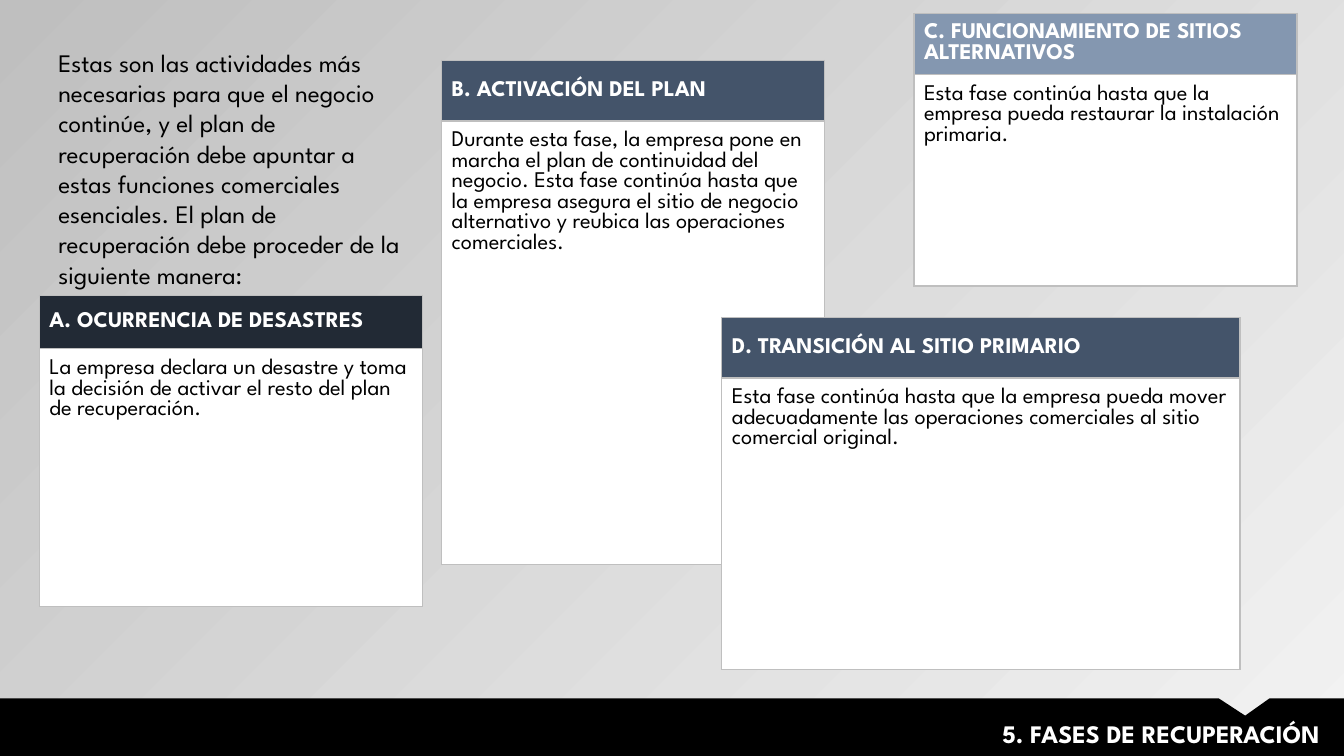
from lxml.etree import SubElement
from pptx import Presentation
from pptx.dml.color import RGBColor
from pptx.enum.text import MSO_ANCHOR as Anchor, MSO_AUTO_SIZE as AutoSize, PP_ALIGN as Align
from pptx.oxml.ns import qn
from pptx.util import Inches, Pt

WIDTH, HEIGHT = Inches(13.33), Inches(7.5)
FONT = "League Spartan"
WHITE, BLACK, BORDER, SLATE = "FFFFFF", "000000", "BFBFBF", "44546A"

PHASES = [
    (68.0, 1.73, 28.51, (8, 28), "8497B0", "C. FUNCIONAMIENTO DE SITIOS ALTERNATIVOS",
     "Esta fase continúa hasta que la empresa pueda restaurar la instalación primaria."),
    (32.86, 8, 28.51, (8, 58.67), SLATE, "B. ACTIVACIÓN DEL PLAN",
     "Durante esta fase, la empresa pone en marcha el plan de continuidad del negocio. "
     "Esta fase continúa hasta que la empresa asegura el sitio de negocio alternativo "
     "y reubica las operaciones comerciales."),
    (53.71, 42, 38.56, (8, 38.53), SLATE, "D. TRANSICIÓN AL SITIO PRIMARIO",
     "Esta fase continúa hasta que la empresa pueda mover adecuadamente las operaciones "
     "comerciales al sitio comercial original."),
    (2.93, 39.07, 28.51, (7.07, 34.13), "222A35", "A. OCURRENCIA DE DESASTRES",
     "La empresa declara un desastre y toma la decisión de activar el resto del plan "
     "de recuperación."),
]
BAND = [(0, 92.4), (90.7, 92.4), (92.65, 94.67), (94.45, 92.4), (100, 92.4), (100, 100), (0, 100)]
INTRO = (
    "Estas son las actividades más necesarias para que el negocio continúe, y el plan de "
    "recuperación debe apuntar a estas funciones comerciales esenciales. El plan de "
    "recuperación debe proceder de la siguiente manera:"
)


def across(percent):
    return round(WIDTH * percent / 100)


def down(percent):
    return round(HEIGHT * percent / 100)


def colour(hex_code):
    return RGBColor.from_string(hex_code)


def write(frame, words, size, hex_code, bold=False, align=Align.LEFT):
    frame.text = words
    frame.word_wrap = True
    paragraph = frame.paragraphs[0]
    paragraph.alignment = align
    font = paragraph.runs[0].font
    font.name, font.size, font.bold = FONT, Pt(size), bold
    font.color.rgb = colour(hex_code)


def outline_cell(cell):
    properties = cell._tc.get_or_add_tcPr()
    for position, side in enumerate(("a:lnL", "a:lnR", "a:lnT", "a:lnB")):
        edge = SubElement(properties, qn(side), w=str(Pt(1)))
        ink = SubElement(edge, qn("a:solidFill"))
        SubElement(ink, qn("a:srgbClr"), val=BORDER)
        properties.insert(position, edge)


def add_phase(slide, left, top, width, rows, header_fill, heading, description):
    phase = slide.shapes.add_table(
        2, 1, across(left), down(top), across(width), down(sum(rows))).table
    phase.horz_banding = False
    contents = [(heading, header_fill, WHITE, True, Anchor.MIDDLE),
                (description, WHITE, BLACK, False, Anchor.TOP)]
    for index, (words, fill, ink, bold, anchor) in enumerate(contents):
        phase.rows[index].height = down(rows[index])
        cell = phase.cell(index, 0)
        cell.margin_left = cell.margin_right = Inches(0.1)
        cell.margin_top = cell.margin_bottom = Inches(0.1)
        cell.vertical_anchor = anchor
        cell.fill.solid()
        cell.fill.fore_color.rgb = colour(fill)
        write(cell.text_frame, words, 16, ink, bold)
        outline_cell(cell)


def add_band(slide):
    points = [(across(x), down(y)) for x, y in BAND]
    builder = slide.shapes.build_freeform(*points[0], scale=1.0)
    builder.add_line_segments(points[1:], close=True)
    band = builder.convert_to_shape()
    band.shadow.inherit = False
    band.fill.solid()
    band.fill.fore_color.rgb = colour(BLACK)
    band.line.fill.background()


def place_title(slide):
    title = slide.shapes.title
    title.left, title.top = across(1.8), down(94.4)
    title.width, title.height = across(97.15), down(5.6)
    frame = title.text_frame
    frame.auto_size = AutoSize.NONE
    frame.vertical_anchor = Anchor.TOP
    write(frame, "5. FASES DE RECUPERACIÓN", 18, WHITE, True, Align.RIGHT)
    slide.shapes._spTree.append(title._element)


def add_intro(slide):
    intro = slide.shapes.add_textbox(across(3.6), down(5.6), across(27.23), down(33.4))
    write(intro.text_frame, INTRO, 18, BLACK)


def paint_background(slide):
    fill = slide.background.fill
    fill.gradient()
    fill.gradient_angle = 135
    for stop, hex_code, position in zip(fill.gradient_stops, ("F2F2F2", "BFBFBF"), (0, 1)):
        stop.color.rgb = colour(hex_code)
        stop.position = position


def main():
    deck = Presentation()
    deck.slide_width, deck.slide_height = WIDTH, HEIGHT
    slide = deck.slides.add_slide(deck.slide_layouts[5])
    paint_background(slide)
    for phase in PHASES:
        add_phase(slide, *phase)
    add_band(slide)
    place_title(slide)
    add_intro(slide)
    deck.save("out.pptx")


if __name__ == "__main__":
    main()
